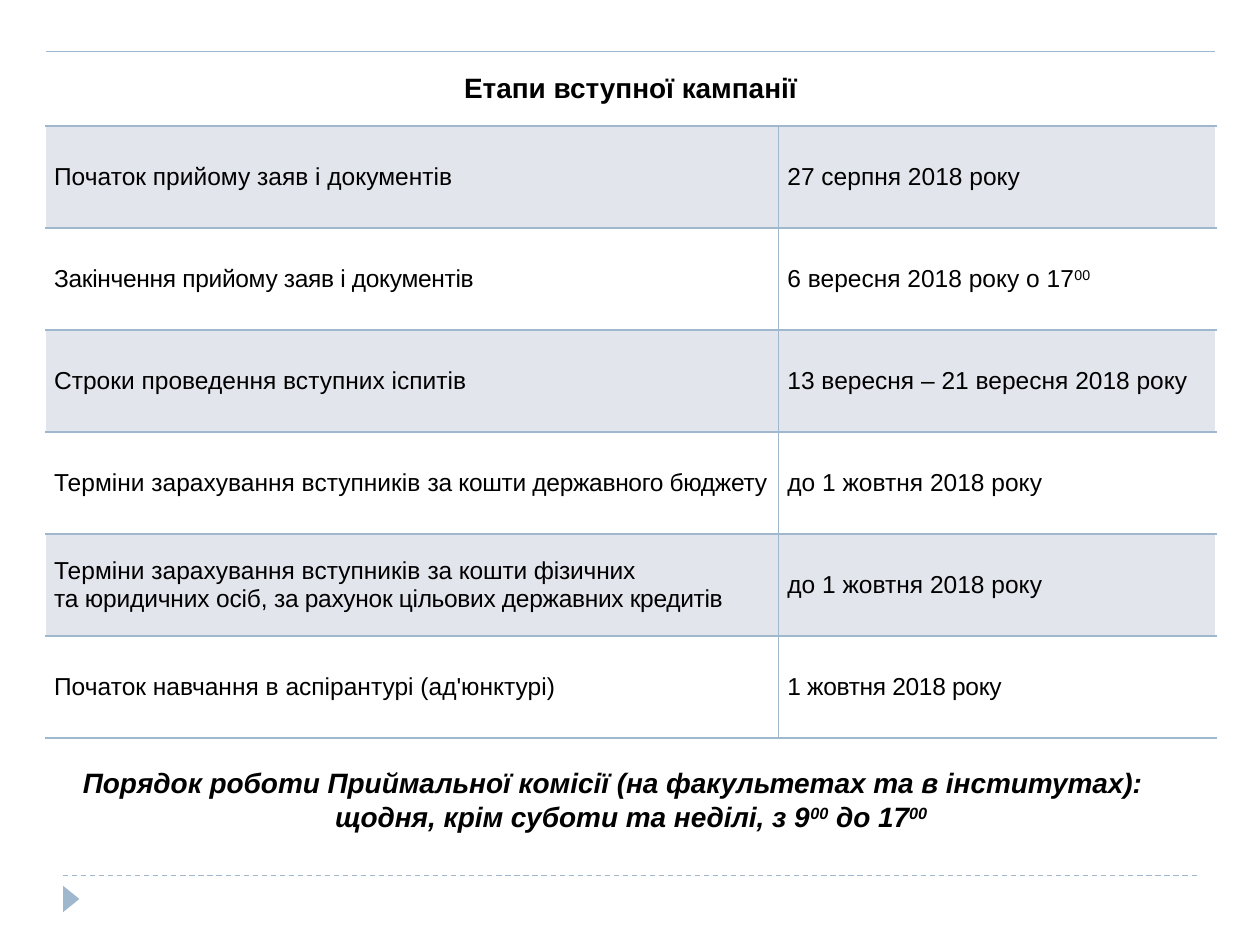
"""Build the slide with the stages of the admission campaign."""
from lxml import etree
from pptx import Presentation
from pptx.dml.color import RGBColor
from pptx.enum import dml, shapes, text
from pptx.oxml import ns
from pptx.util import Inches, Pt

BLUE, GREY, WHITE, BLACK = "9FB8CD", "E3E5ED", "FFFFFF", "000000"
TERM = "Терміни зарахування вступників "
TITLE = [[("Етапи вступної кампанії",)]]
STAGES = [
    ([[("Початок прийому заяв і документів",)]],
     [[("27 серпня 2018 року",)]]),
    ([[("Закінчення прийому заяв і документів", -20)]],
     [[("6 вересня 2018 року о 17",), ("00", 0, 30)]]),
    ([[("Строки проведення вступних іспитів",)]],
     [[("13 вересня – 21 вересня 2018 року",)]]),
    ([[(TERM,), ("за кошти державного бюджету", -20)]],
     [[("до 1 жовтня 2018 року",)]]),
    ([[(TERM,), ("за кошти фізичних", -10)],
      [("та юридичних осіб, ", -10),
       ("за рахунок цільових державних кредитів", -20)]],
     [[("до 1 жовтня 2018 року",)]]),
    ([[("Початок навчання в аспірантурі (ад'юнктурі)",)]],
     [[("1 жовтня 2018 року", -20)]]),
]
HOURS = [
    [("Порядок роботи Приймальної комісії (на факультетах та в інститутах):",)],
    [("щодня, крім суботи та неділі, з 9",), ("00", 0, 30),
     (" до 17",), ("00", 0, 30)],
]
COLS, HEAD, ROW = (5.82, 3.47), 0.59, 0.81


def color(code):
    return RGBColor.from_string(code)


def write(frame, paras, size, bold=False, italic=False):
    for i, runs in enumerate(paras):
        para = frame.add_paragraph() if i else frame.paragraphs[0]
        for words, space, base in ((r + (0, 0))[:3] for r in runs):
            run = para.add_run()
            run.text = words
            font = run.font
            font.name, font.size = "Arial", Pt(size)
            font.bold, font.italic = bold, italic
            font.color.rgb = color(BLACK)
            props = run._r.get_or_add_rPr()
            if space:
                props.set("spc", str(space))
            if base:
                props.set("baseline", str(base * 1000))


def style(cell, fill, sides):
    cell.vertical_anchor = text.MSO_ANCHOR.MIDDLE
    cell.margin_left = cell.margin_right = Inches(0.07)
    cell.margin_top = cell.margin_bottom = 0
    cell.fill.solid()
    cell.fill.fore_color.rgb = color(fill)
    props = cell._tc.get_or_add_tcPr()
    for i, side in enumerate(sides):
        line = etree.Element(ns.qn(f"a:ln{side}"), w=str(Pt(1)))
        solid = etree.SubElement(line, ns.qn("a:solidFill"))
        etree.SubElement(solid, ns.qn("a:srgbClr"), val=BLUE)
        props.insert(i, line)


def add_grid(slide):
    high = HEAD + ROW * len(STAGES)
    grid = slide.shapes.add_table(
        len(STAGES) + 1, len(COLS), Inches(0.36), Inches(0.41),
        Inches(sum(COLS)), Inches(high)).table
    grid.first_row = grid.horz_banding = False
    for col, wide in zip(grid.columns, COLS):
        col.width = Inches(wide)
    for i, row in enumerate(grid.rows):
        row.height = Inches(ROW if i else HEAD)
    for cell in grid.rows[0].cells:
        style(cell, WHITE, "TB")
    head = grid.cell(0, 0)
    head.merge(grid.cell(0, 1))
    write(head.text_frame, TITLE, 16, bold=True)
    head.text_frame.paragraphs[0].alignment = text.PP_ALIGN.CENTER
    for i, stage in enumerate(STAGES, 1):
        for j, paras in enumerate(stage):
            cell = grid.cell(i, j)
            style(cell, GREY if i % 2 else WHITE, ("RTB", "LTB")[j])
            write(cell.text_frame, paras, 14)


def add_foot(slide):
    rule = slide.shapes.add_connector(
        shapes.MSO_CONNECTOR.STRAIGHT,
        Inches(0.5), Inches(6.95), Inches(9.5), Inches(6.95))
    rule.line.color.rgb = color(BLUE)
    rule.line.width = Pt(0.75)
    rule.line.dash_style = dml.MSO_LINE.DASH
    etree.SubElement(rule._element.spPr, ns.qn("a:effectLst"))
    mark = slide.shapes.add_shape(
        shapes.MSO_SHAPE.ISOSCELES_TRIANGLE,
        Inches(0.46), Inches(7.07), Inches(0.21), Inches(0.13))
    mark.rotation = 90
    mark.shadow.inherit = False
    mark.fill.solid()
    mark.fill.fore_color.rgb = color(BLUE)
    mark.line.fill.background()


def add_hours(slide):
    frame = slide.shapes.add_textbox(
        Inches(0.56), Inches(6.03), Inches(8.9), Inches(0.64)).text_frame
    frame.word_wrap = True
    frame.auto_size = text.MSO_AUTO_SIZE.SHAPE_TO_FIT_TEXT
    write(frame, HOURS, 16, bold=True, italic=True)
    frame.paragraphs[1].alignment = text.PP_ALIGN.CENTER


def main():
    deck = Presentation()
    deck.slide_width, deck.slide_height = Inches(10), Inches(7.5)
    slide = deck.slides.add_slide(deck.slide_layouts[6])
    add_foot(slide)
    add_grid(slide)
    add_hours(slide)
    deck.save("out.pptx")


if __name__ == "__main__":
    main()
